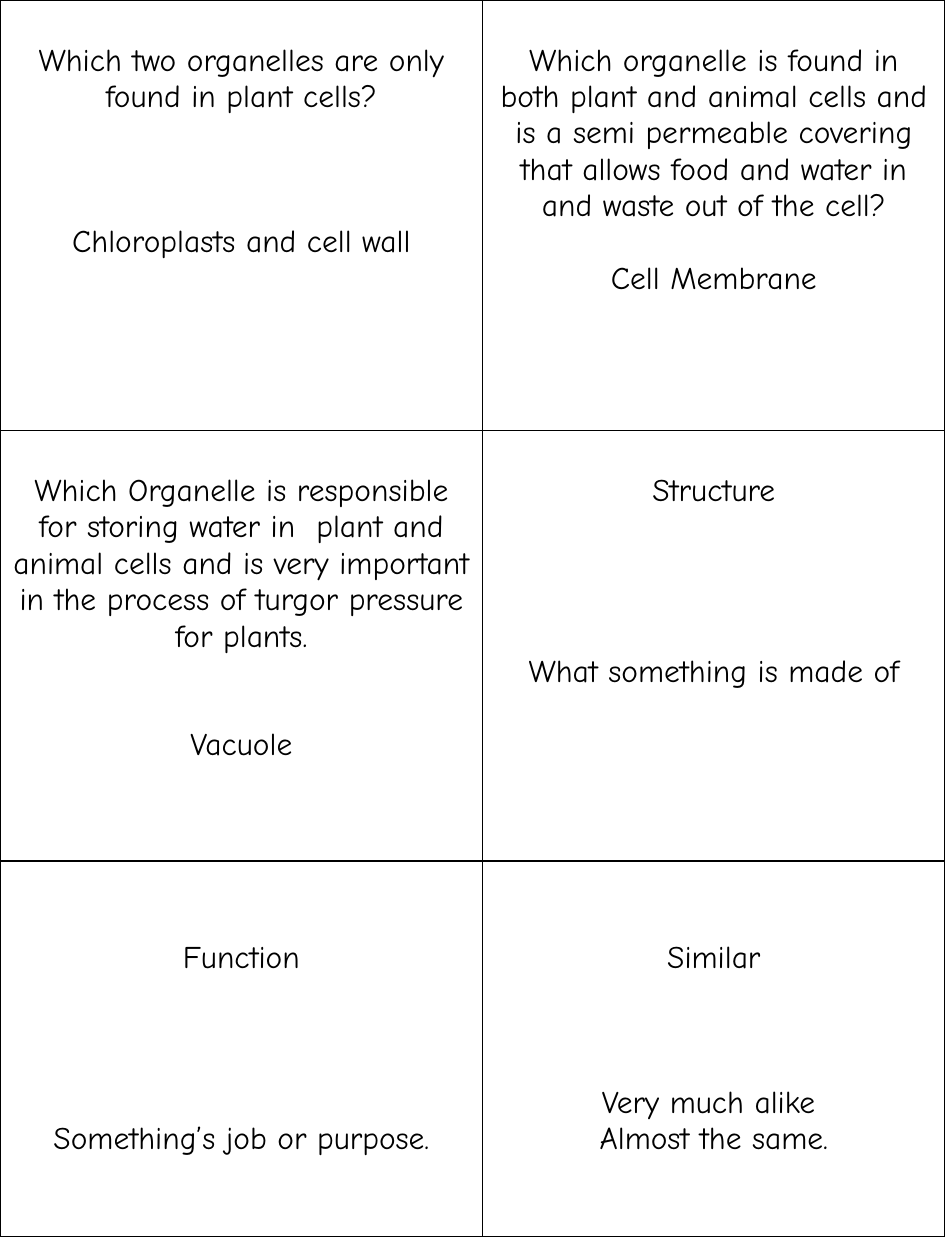
"""Build a page of six biology question-and-answer cards."""
from lxml.etree import SubElement
from pptx import Presentation
from pptx.dml.color import RGBColor
from pptx.enum.text import PP_ALIGN
from pptx.oxml.ns import qn
from pptx.util import Cm, Pt

BLACK = RGBColor(0x00, 0x00, 0x00)
WHITE = RGBColor(0xFF, 0xFF, 0xFF)
FONT = "Comic Neue"
LINE_HEIGHT = Pt(20.7)
CARD_PADDING = Cm(0.13)
COLUMN_WIDTHS = [Cm(9.73), Cm(9.32)]
ROW_HEIGHTS = [Cm(8.68), Cm(8.68), Cm(7.57)]

# Each line of a card is (empty lines above it, wording).
CARDS = [
    [
        [(1, "Which two organelles are only found in plant cells?"),
         (3, "Chloroplasts and cell wall")],
        [(1, "Which organelle is found in both plant and animal cells and is a semi "
             "permeable covering that allows food and water in and waste out of the cell?"),
         (1, "Cell Membrane")],
    ],
    [
        [(1, "Which Organelle is responsible for storing water in  plant and animal cells "
             "and is very important in the process of turgor pressure for plants."),
         (2, "Vacuole")],
        [(1, "Structure"), (4, "What something is made of")],
    ],
    [
        [(2, "Function"), (4, "Something’s job or purpose.")],
        [(2, "Similar"), (3, "Very much alike "), (0, "Almost the same.")],
    ],
]


def add_borders(cell):
    properties = cell._tc.get_or_add_tcPr()
    for side in ("a:lnL", "a:lnR", "a:lnT", "a:lnB"):
        border = SubElement(properties, qn(side), w=str(Pt(1)))
        SubElement(SubElement(border, qn("a:solidFill")), qn("a:srgbClr"), val=str(BLACK))


presentation = Presentation()
presentation.slide_width = Cm(19.05)
presentation.slide_height = Cm(25.4)
slide = presentation.slides.add_slide(presentation.slide_layouts[6])

cards = slide.shapes.add_table(
    len(ROW_HEIGHTS), len(COLUMN_WIDTHS), 0, 0, sum(COLUMN_WIDTHS), sum(ROW_HEIGHTS)
).table
cards.first_row = False
cards.horz_banding = False
for column, width in zip(cards.columns, COLUMN_WIDTHS):
    column.width = width

for row, height, row_cards in zip(cards.rows, ROW_HEIGHTS, CARDS):
    row.height = height
    for cell, lines in zip(row.cells, row_cards):
        add_borders(cell)
        cell.fill.solid()
        cell.fill.fore_color.rgb = WHITE
        cell.margin_top = CARD_PADDING + lines[0][0] * LINE_HEIGHT
        for index, (gap, wording) in enumerate(lines):
            line = cell.text_frame.add_paragraph() if index else cell.text_frame.paragraphs[0]
            line.text = wording
            line.alignment = PP_ALIGN.CENTER
            line.space_before = gap * LINE_HEIGHT if index else Pt(0)
            line.font.name = FONT
            line.font.size = Pt(18)
            line.font.color.rgb = BLACK

presentation.save("out.pptx")
